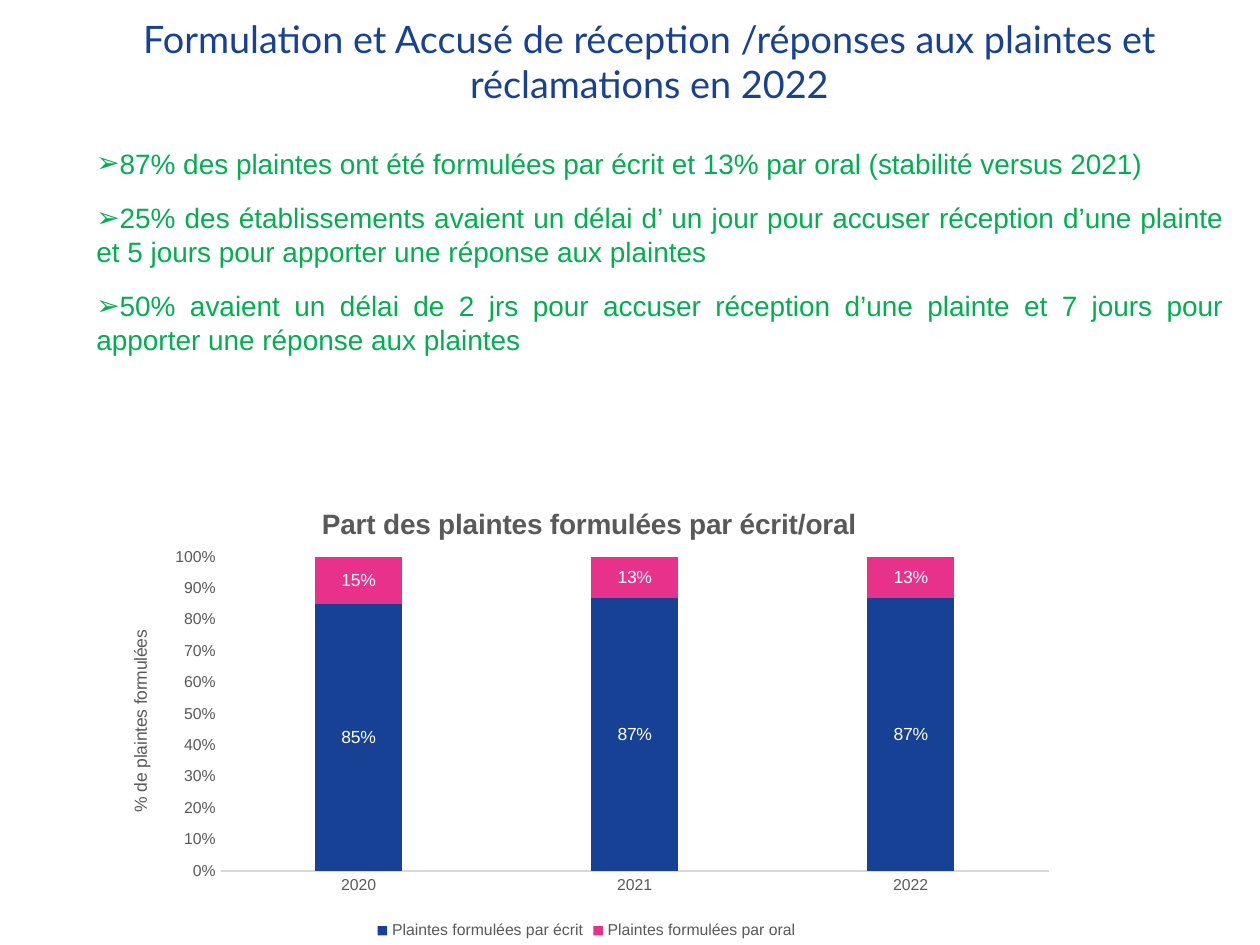
from lxml import etree
from pptx import Presentation, util as u
from pptx.chart.data import CategoryChartData
from pptx.dml.color import RGBColor
from pptx.enum import chart as ch, text
from pptx.oxml import parse_xml
from pptx.oxml.ns import nsdecls, qn

SCALE = 914400 / 126
COLORS = {"blue": "164194", "pink": "E8318A", "green": "00B050",
          "gray": "595959", "axis": "D9D9D9", "white": "FFFFFF"}
TITLE = "Formulation et Accusé de réception /réponses aux plaintes et réclamations en 2022"
FINDINGS = [
    "87% des plaintes ont été formulées par écrit et 13% par oral (stabilité versus 2021)",
    "25% des établissements avaient un délai d’ un jour pour accuser réception d’une plainte "
    "et 5 jours pour apporter une réponse aux plaintes",
    "50% avaient un délai de 2 jrs pour accuser réception d’une plainte "
    "et 7 jours pour apporter une réponse aux plaintes",
]
YEARS = ["2020", "2021", "2022"]
SERIES = [
    ("Plaintes formulées par écrit", [0.85, 0.87, 0.87], "blue"),
    ("Plaintes formulées par oral", [0.15, 0.13, 0.13], "pink"),
]


def px(value):
    return u.Emu(round(value * SCALE))


def color(name):
    return RGBColor.from_string(COLORS[name])


def set_font(font, size, color_name, name="Arial", bold=False):
    font.name = name
    font.size = u.Pt(size)
    font.bold = bold
    font.color.rgb = color(color_name)


def add_bullet(paragraph, character, indent):
    properties = paragraph._p.get_or_add_pPr()
    properties.set("marL", "0")
    properties.set("indent", str(-px(indent)))
    etree.SubElement(properties, qn("a:buFont")).set("typeface", "Arial")
    etree.SubElement(properties, qn("a:buChar")).set("char", character)


def add_text(slide, box, lines, size, color_name, align, name="Arial",
             anchor=text.MSO_ANCHOR.TOP, bullet=None):
    shape = slide.shapes.add_textbox(*map(px, box))
    frame = shape.text_frame
    frame.word_wrap = True
    frame.vertical_anchor = anchor
    for index, line in enumerate(lines):
        paragraph = frame.paragraphs[0] if index == 0 else frame.add_paragraph()
        paragraph.text = line
        paragraph.alignment = align
        if index:
            paragraph.space_before = u.Pt(12)
        if bullet:
            add_bullet(paragraph, bullet, 39)
        set_font(paragraph.font, size, color_name, name)


def set_layout(element, position, inner=False, **fractions):
    for old in element.findall(qn("c:layout")):
        element.remove(old)
    target = '<c:layoutTarget val="inner"/>' if inner else ""
    modes = "".join(f'<c:{key}Mode val="edge"/>' for key in "xy")
    values = "".join(f'<c:{key} val="{value}"/>' for key, value in fractions.items())
    element.insert(position, parse_xml(
        f'<c:layout {nsdecls("c")}><c:manualLayout>{target}{modes}{values}'
        "</c:manualLayout></c:layout>"))


def set_title(title, wording, size, bold):
    title.text_frame.text = wording
    set_font(title.text_frame.paragraphs[0].font, size, "gray", bold=bold)


def style_axis(axis):
    axis.has_major_gridlines = False
    axis.major_tick_mark = axis.minor_tick_mark = ch.XL_TICK_MARK.NONE
    set_font(axis.tick_labels.font, 9, "gray")


def style_axes(chart):
    category_axis, value_axis = chart.category_axis, chart.value_axis
    for axis in (category_axis, value_axis):
        style_axis(axis)
    category_axis.format.line.color.rgb = color("axis")
    category_axis.format.line.width = u.Pt(0.75)
    value_axis.format.line.fill.background()
    value_axis.minimum_scale = 0
    value_axis.maximum_scale = 1
    value_axis.major_unit = 0.1
    value_axis.tick_labels.number_format = "0%"
    value_axis.tick_labels.number_format_is_linked = False
    set_title(value_axis.axis_title, "% de plaintes formulées", 10, False)
    value_axis.axis_title.text_frame._txBody.bodyPr.set("rot", "-5400000")


def style_series(series, color_name):
    series.format.fill.solid()
    series.format.fill.fore_color.rgb = color(color_name)
    series.invert_if_negative = False
    labels = series.data_labels
    labels.show_value = True
    labels.number_format = "0%"
    labels.number_format_is_linked = False
    labels.position = ch.XL_LABEL_POSITION.CENTER
    set_font(labels.font, 10, "white")


def add_complaint_chart(slide, box):
    data = CategoryChartData(number_format="0%")
    data.categories = YEARS
    for name, values, _ in SERIES:
        data.add_series(name, values)
    chart = slide.shapes.add_chart(
        ch.XL_CHART_TYPE.COLUMN_STACKED_100, *map(px, box), data).chart
    set_font(chart.font, 10, "gray")
    chart.has_title = True
    set_title(chart.chart_title, "Part des plaintes formulées par écrit/oral", 16, True)
    set_layout(chart.chart_title._element, 1, x=0.22, y=0.04)
    chart.has_legend = True
    chart.legend.position = ch.XL_LEGEND_POSITION.BOTTOM
    chart.legend.include_in_layout = False
    set_font(chart.legend.font, 9, "gray")
    style_axes(chart)
    plot = chart.plots[0]
    plot.gap_width = 219
    plot.overlap = 100
    plot.vary_by_categories = False
    for series, (_, _, color_name) in zip(plot.series, SERIES):
        style_series(series, color_name)
    plot_area = chart._chartSpace.chart.plotArea
    set_layout(plot_area, 0, inner=True, x=0.12, y=0.16, w=0.86, h=0.68)


def main():
    presentation = Presentation()
    presentation.slide_width = px(1260)
    presentation.slide_height = px(945)
    slide = presentation.slides.add_slide(presentation.slide_layouts[6])
    add_text(slide, (63, 6, 1173, 110), [TITLE], 21.6, "blue", text.PP_ALIGN.CENTER,
             name="Lato", anchor=text.MSO_ANCHOR.MIDDLE)
    add_complaint_chart(slide, (105, 483, 963, 462))
    add_text(slide, (84, 140, 1152, 280), FINDINGS, 16, "green",
             text.PP_ALIGN.JUSTIFY, bullet="➢")
    presentation.save("out.pptx")


if __name__ == "__main__":
    main()
